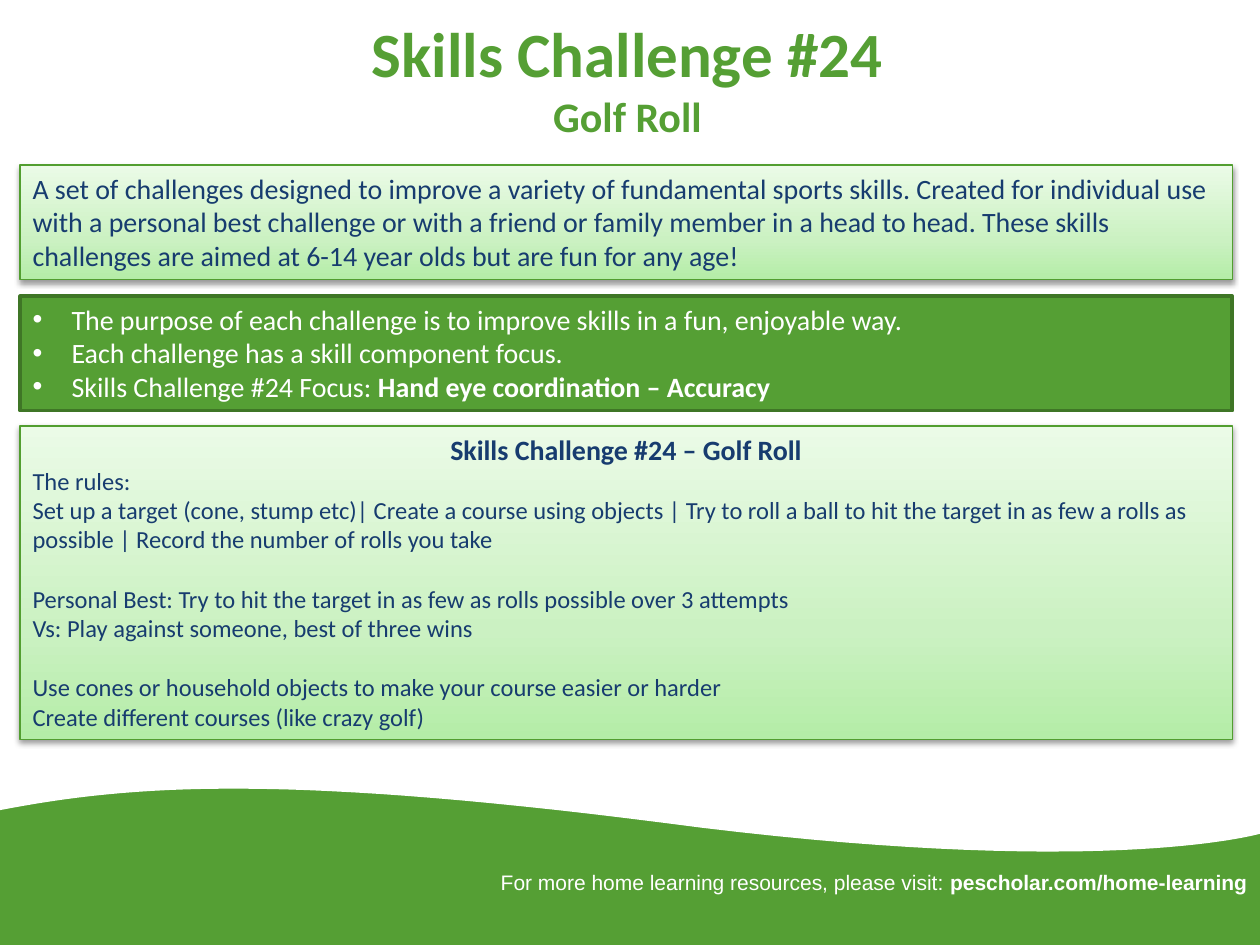
from copy import deepcopy

from lxml.etree import SubElement
from pptx import Presentation
from pptx.dml.color import RGBColor
from pptx.enum.shapes import MSO_SHAPE
from pptx.enum.text import MSO_ANCHOR, MSO_AUTO_SIZE, PP_ALIGN
from pptx.oxml.ns import qn
from pptx.util import Inches, Pt

GREEN, DARK_GREEN, EDGE_GREEN = "559F34", "3F7626", "529E30"
NAVY, WHITE = "173C6F", "FFFFFF"
PALE_STOPS = [(0, "B4EDA7"), (0.35, "CBF1C2"), (1, "EBFBE7")]

PANEL_LEFT, PANEL_WIDTH = 0.16, 9.62
RULES_SIZE = 14
RULES_GAP = 17  # one line of the rules text

INTRO = (
    "A set of challenges designed to improve a variety of fundamental sports skills. "
    "Created for individual use with a personal best challenge or with a friend or family "
    "member in a head to head. These skills challenges are aimed at 6-14 year olds but are "
    "fun for any age!"
)
RULE_GROUPS = [
    [
        "The rules:",
        "Set up a target (cone, stump etc)| Create a course using objects | Try to roll a ball "
        "to hit the target in as few a rolls as possible | Record the number of rolls you take",
    ],
    [
        "Personal Best: Try to hit the target in as few as rolls possible over 3 attempts",
        "Vs: Play against someone, best of three wins",
    ],
    [
        "Use cones or household objects to make your course easier or harder",
        "Create different courses (like crazy golf)",
    ],
]

# Two cubic curves: start, two control points, end
WAVE_CURVES = [
    [(0, 6.43), (1.05, 6.23), (2.25, 6.13), (5.57, 6.57)],
    [(5.57, 6.57), (8.87, 6.97), (10.03, 6.61), (10.03, 6.61)],
]
WAVE_TOP = 5.98


def color(value):
    return RGBColor.from_string(value)


def add_rectangle(slide, left, top, width, height, fill=None):
    shape = slide.shapes.add_shape(
        MSO_SHAPE.RECTANGLE, Inches(left), Inches(top), Inches(width), Inches(height))
    shape.shadow.inherit = False
    shape.line.fill.background()
    if fill:
        shape.fill.solid()
        shape.fill.fore_color.rgb = color(fill)
    return shape


def curve_points(controls, steps=32):
    start, first, second, end = controls
    for step in range(steps + 1):
        t = step / steps
        weights = ((1 - t) ** 3, 3 * t * (1 - t) ** 2, 3 * t * t * (1 - t), t ** 3)
        yield tuple(
            Inches(sum(weight * value for weight, value in zip(weights, values)))
            for values in zip(start, first, second, end))


def add_wave(slide):
    """Cut the top of the green footer with a white wavy shape."""
    points = [point for controls in WAVE_CURVES for point in curve_points(controls)]
    points += [(points[-1][0], Inches(WAVE_TOP)), (0, Inches(WAVE_TOP))]
    builder = slide.shapes.build_freeform(*points[0], scale=1.0)
    builder.add_line_segments(points[1:], close=True)
    wave = builder.convert_to_shape()
    wave.shadow.inherit = False
    wave.fill.solid()
    wave.fill.fore_color.rgb = color(WHITE)
    wave.line.fill.background()


def set_pale_gradient(shape):
    shape.fill.gradient()
    shape.fill.gradient_angle = 90
    stop_list = shape._element.spPr.find(qn("a:gradFill")).find(qn("a:gsLst"))
    stop_list.append(deepcopy(stop_list[0]))
    for stop, (position, value) in zip(shape.fill.gradient_stops, PALE_STOPS):
        stop.position = position
        stop.color.rgb = color(value)


def set_soft_shadow(shape):
    effects = shape._element.spPr.find(qn("a:effectLst"))
    shadow = SubElement(effects, qn("a:outerShdw"), blurRad="40000", dist="20000",
                        dir="5400000", rotWithShape="0")
    shade = SubElement(shadow, qn("a:srgbClr"), val="000000")
    SubElement(shade, qn("a:alpha"), val="38000")


def add_panel(slide, top, height, fill=None):
    """Add a full-width text panel, pale and shadowed unless a fill is given."""
    panel = add_rectangle(slide, PANEL_LEFT, top, PANEL_WIDTH, height, fill)
    if not fill:
        set_pale_gradient(panel)
        set_soft_shadow(panel)
    panel.line.color.rgb = color(DARK_GREEN if fill else EDGE_GREEN)
    panel.line.width = Pt(2 if fill else 0.75)
    return prepare_frame(panel)


def prepare_frame(shape, anchor=MSO_ANCHOR.TOP):
    frame = shape.text_frame
    frame.word_wrap = True
    frame.vertical_anchor = anchor
    return frame


def add_text_box(slide, left, top, width, height, anchor=MSO_ANCHOR.TOP):
    box = slide.shapes.add_textbox(Inches(left), Inches(top), Inches(width), Inches(height))
    return prepare_frame(box, anchor)


def add_bullet(paragraph):
    properties = paragraph._p.get_or_add_pPr()
    properties.set("marL", str(Inches(0.31)))
    properties.set("indent", str(Inches(-0.31)))
    SubElement(properties, qn("a:buFont"), typeface="Arial")
    SubElement(properties, qn("a:buChar"), char="•")


def write_paragraph(frame, text, size, value, bold_ending="", bold=None, font="Calibri",
                    align=PP_ALIGN.LEFT, bullet=False, space_before=None):
    paragraph = frame.paragraphs[0]
    if paragraph.runs:
        paragraph = frame.add_paragraph()
    paragraph.alignment = align
    if space_before:
        paragraph.space_before = Pt(space_before)
    if bullet:
        add_bullet(paragraph)
    paragraph.font.name = font
    paragraph.font.size = Pt(size)
    paragraph.font.color.rgb = color(value)
    paragraph.font.bold = bold
    paragraph.add_run().text = text
    if bold_ending:
        ending = paragraph.add_run()
        ending.text = bold_ending
        ending.font.bold = True
    return paragraph


def add_title(slide):
    frame = add_text_box(slide, 0.48, -0.01, 9, 1.25, MSO_ANCHOR.MIDDLE)
    paragraph = write_paragraph(frame, "Skills Challenge #24", 36, GREEN, bold=True,
                                align=PP_ALIGN.CENTER)
    paragraph.add_line_break()
    subtitle = paragraph.add_run()
    subtitle.text = "Golf Roll"
    subtitle.font.size = Pt(24)


def add_rules(slide):
    frame = add_panel(slide, 3.38, 2.49)
    write_paragraph(frame, "Skills Challenge #24 – Golf Roll", 16, NAVY, bold=True,
                    align=PP_ALIGN.CENTER)
    for group_index, group in enumerate(RULE_GROUPS):
        for line_index, line in enumerate(group):
            starts_group = group_index > 0 and line_index == 0
            write_paragraph(frame, line, RULES_SIZE, NAVY,
                            space_before=RULES_GAP if starts_group else None)


def main():
    presentation = Presentation()
    presentation.slide_width, presentation.slide_height = Inches(10), Inches(7.5)
    slide = presentation.slides.add_slide(presentation.slide_layouts[6])

    add_rectangle(slide, 0, 6.21, 10, 1.29, GREEN)
    add_wave(slide)
    add_title(slide)
    write_paragraph(add_panel(slide, 1.31, 0.91), INTRO, 16, NAVY)

    purpose = add_panel(slide, 2.35, 0.91, GREEN)
    for text, focus in [
        ("The purpose of each challenge is to improve skills in a fun, enjoyable way.", ""),
        ("Each challenge has a skill component focus.", ""),
        ("Skills Challenge #24 Focus: ", "Hand eye coordination – Accuracy"),
    ]:
        write_paragraph(purpose, text, 16, WHITE, focus, bullet=True)

    add_rules(slide)
    footer = add_text_box(slide, 3.39, 6.85, 6.61, 0.3)
    footer.auto_size = MSO_AUTO_SIZE.SHAPE_TO_FIT_TEXT
    write_paragraph(footer, "For more home learning resources, please visit: ", 12, WHITE,
                    "pescholar.com/home-learning", font="Arial", align=PP_ALIGN.RIGHT)
    presentation.save("out.pptx")


if __name__ == "__main__":
    main()
